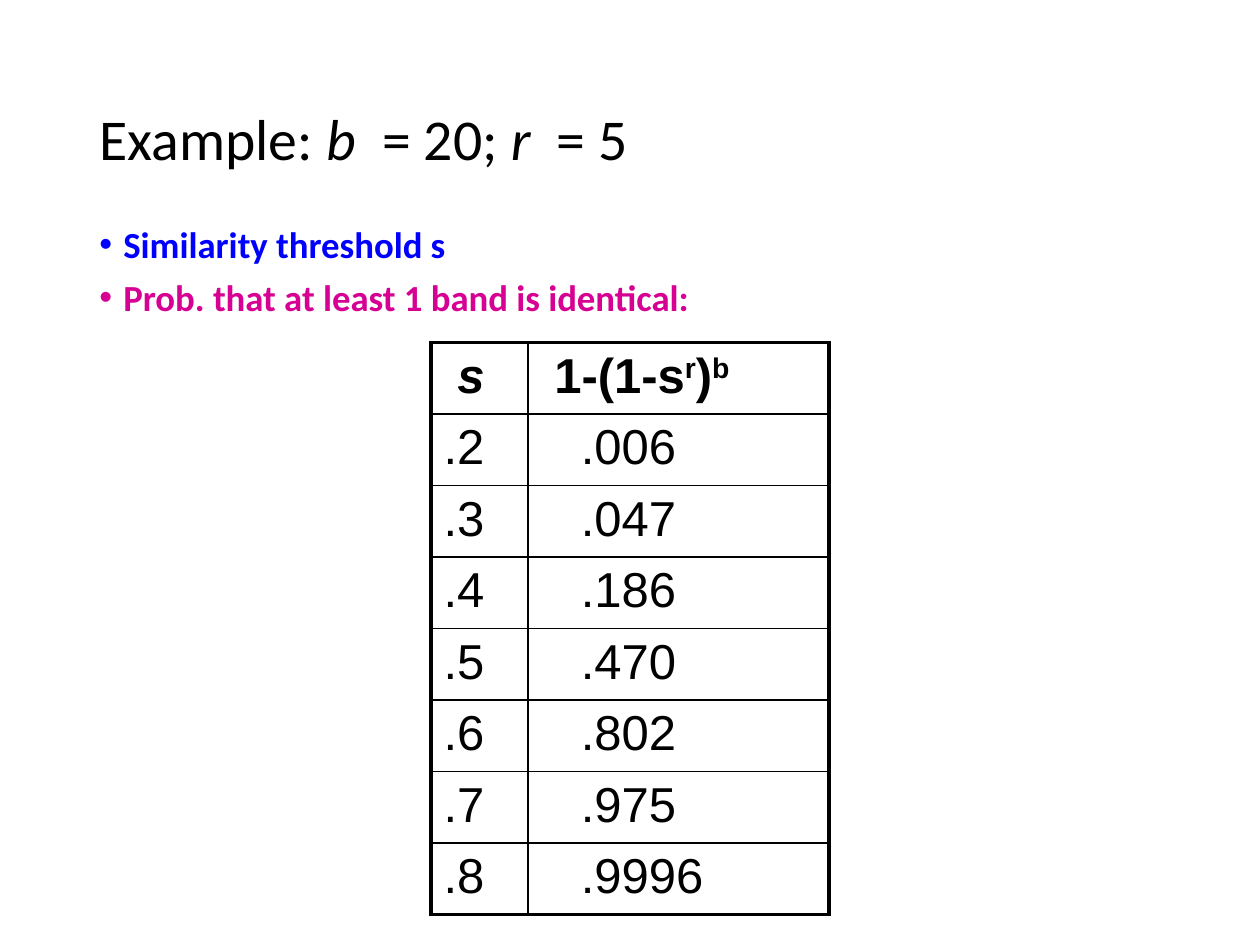
import pptx
import pptx.dml.color
import pptx.enum.text
import pptx.oxml
import pptx.oxml.ns
import pptx.util
from pptx.util import Inches

BLACK = "000000"
TITLE = [("Example: ", False), ("b", True), (" = 20; ", False),
         ("r", True), (" = 5", False)]
POINTS = [("Similarity threshold s", "0000FF"),
          ("Prob. that at least 1 band is identical:", "D60093")]
ROWS = [(".2", ".006"), (".3", ".047"), (".4", ".186"), (".5", ".470"),
        (".6", ".802"), (".7", ".975"), (".8", ".9996")]
HEAD = [("1-(1-s", False), ("r", True), (")", False), ("b", True)]


def color(code):
    return pptx.dml.color.RGBColor.from_string(code)


def style(run, face, size, code=BLACK, bold=False, slant=False):
    font = run.font
    font.name, font.size = face, pptx.util.Pt(size)
    font.color.rgb = color(code)
    font.bold, font.italic = bold, slant


def add_run(para, text):
    run = para.add_run()
    run.text = text
    return run


def add_frame(slide, box):
    frame = slide.shapes.add_textbox(*map(Inches, box)).text_frame
    frame.word_wrap = True
    return frame


def add_title(slide, box):
    frame = add_frame(slide, box)
    frame.vertical_anchor = pptx.enum.text.MSO_ANCHOR.MIDDLE
    para = frame.paragraphs[0]
    para.line_spacing = 0.9
    for text, slant in TITLE:
        run = add_run(para, text)
        style(run, "Calibri", 33, slant=slant)
        if slant:  # wider gap after a variable
            run.font._element.set("spc", "750")


def add_bullet(para):
    props = para._p.get_or_add_pPr()
    indent = Inches(0.19)
    props.set("marL", str(indent))
    props.set("indent", str(-indent))
    space = pptx.oxml.ns.nsdecls("a")
    for tag in ('buFont %s typeface="Arial"', 'buChar %s char="•"'):
        props.append(pptx.oxml.parse_xml(f"<a:{tag % space}/>"))


def add_points(slide, box):
    frame = add_frame(slide, box)
    for i, (text, code) in enumerate(POINTS):
        para = frame.add_paragraph() if i else frame.paragraphs[0]
        para.text = text
        add_bullet(para)
        para.line_spacing = 0.9
        if i:
            para.space_before = pptx.util.Pt(7.5)
        style(para.runs[0], "Calibri", 21, code, bold=True)


def set_edges(cell, thick):
    """Draw all four cell borders, heavier on the sides named in thick."""
    props = cell._tc.get_or_add_tcPr()
    space = pptx.oxml.ns.nsdecls("a")
    for side in "LRTB":
        width = pptx.util.Pt(2.25 if side in thick else 1)
        props.append(pptx.oxml.parse_xml(
            f'<a:ln{side} {space} w="{width}"><a:solidFill>'
            f'<a:srgbClr val="{BLACK}"/></a:solidFill></a:ln{side}>'))


def fill_cell(cell, parts, inset, bold=False, slant=False):
    cell.margin_left = Inches(0.1 + inset)
    para = cell.text_frame.paragraphs[0]
    for text, raised in parts:
        run = add_run(para, text)
        style(run, "Arial", 28, bold=bold, slant=slant)
        if raised:
            run.font._element.set("baseline", "30000")


def add_grid(slide, box):
    count = len(ROWS) + 1
    table = slide.shapes.add_table(count, 2, *map(Inches, box)).table
    table.first_row = table.horz_banding = False
    for col, width in zip(table.columns, (0.77, 2.39)):
        col.width = Inches(width)
    fill_cell(table.cell(0, 0), [("s", False)], 0.11, bold=True, slant=True)
    fill_cell(table.cell(0, 1), HEAD, 0.11, bold=True)
    for i, row in enumerate(ROWS, 1):
        for j, text in enumerate(row):
            fill_cell(table.cell(i, j), [(text, False)], 0.32 * j)
    for i in range(count):
        for j in range(2):
            cell = table.cell(i, j)
            ends = {0: "T", count - 1: "B"}.get(i, "")
            set_edges(cell, "LR"[j] + ends)
            cell.fill.background()


def main():
    deck = pptx.Presentation()
    deck.slide_width, deck.slide_height = Inches(10), Inches(7.5)
    slide = deck.slides.add_slide(deck.slide_layouts[6])
    add_title(slide, (0.69, 0.4, 8.62, 1.45))
    add_points(slide, (0.69, 1.75, 8.62, 4.76))
    add_grid(slide, (3.42, 2.72, 3.16, 4.08))
    deck.save("out.pptx")


if __name__ == "__main__":
    main()
